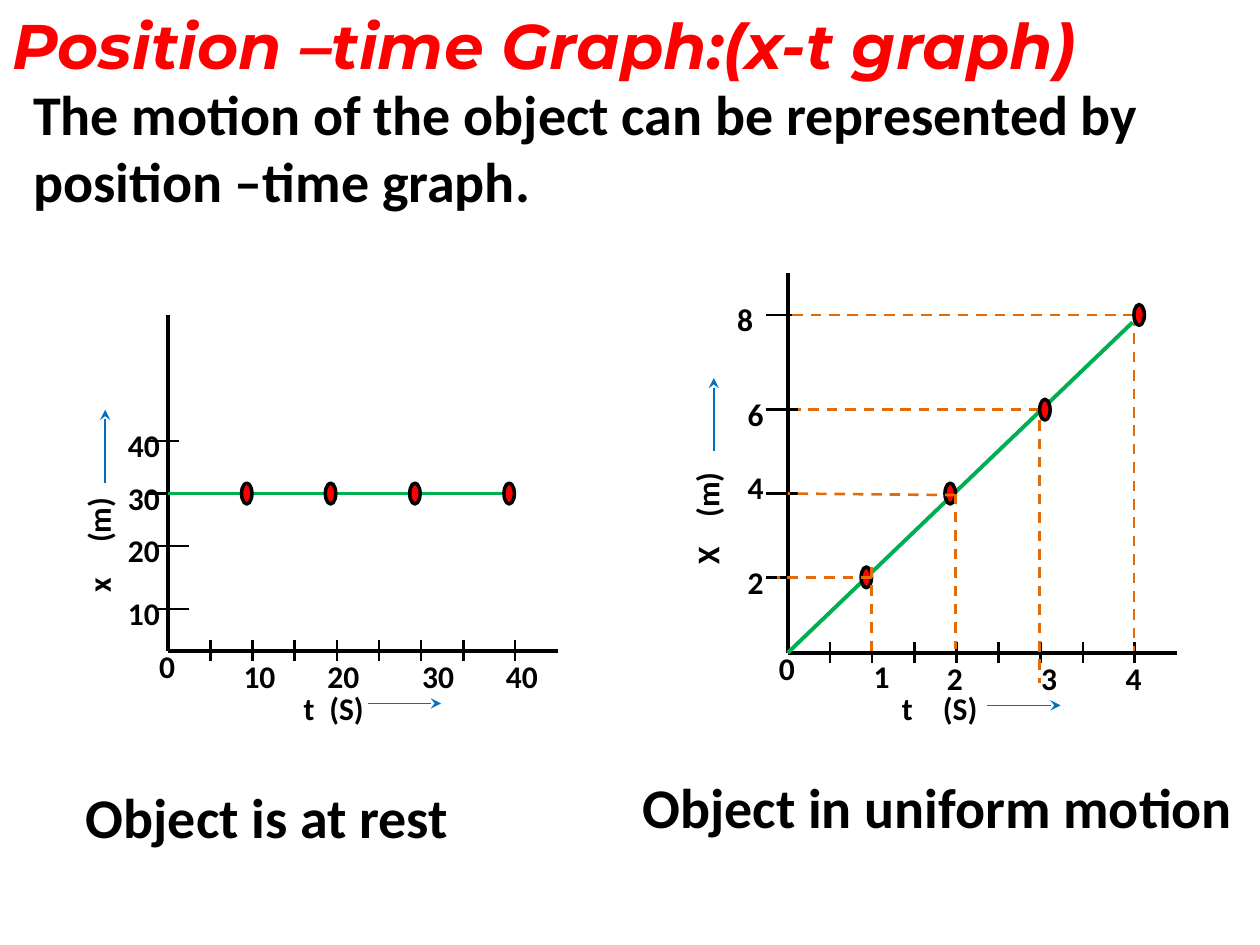
from pptx import Presentation
from pptx.dml.color import RGBColor
from pptx.enum.dml import MSO_LINE
from pptx.enum.shapes import MSO_CONNECTOR, MSO_SHAPE
from pptx.oxml.ns import qn
from pptx.util import Cm, Pt
from lxml.etree import SubElement

COLORS = {"ink": "000000", "red": "FF0000", "arrow": "0070C0",
          "motion": "00B050", "guide": "E36C09"}

# All positions are in centimetres; boxes are (left, top, width, height).
TITLE = ("Position –time Graph:(x-t graph)", (0, 0, 22.81, 1.8))
INTRO = ("The motion of the object can be represented by position –time graph.",
         (0.42, 1.48, 24.97, 3))

GRAPHS = [
    {
        "origin": (3.39, 13.12), "axis_top": 6.35,
        # label, left, top
        "x_labels": [("0", 2.96, 12.91), ("10", 4.66, 13.12), ("20", 6.35, 13.12),
                     ("30", 8.26, 13.12), ("40", 9.95, 13.12)],
        "y_labels": [("10", 2.33, 11.85), ("20", 2.33, 10.58),
                     ("30", 2.33, 9.53), ("40", 2.33, 8.47)],
        # tick left, tick height
        "y_ticks": [(3.18, 12.28), (3.18, 11.01), (2.96, 9.95), (2.96, 8.89)],
        # symbol, unit, box, indent, distance from symbol to unit, rotation
        "axis_titles": [("t", "(S)", (4.87, 13.76, 3.18, 1.03), 1, 0.52, 0),
                        ("x", "(m)", (0.15, 10.85, 3.68, 1.03), 1.02, 0.99, 270)],
        "arrows": [(7.41, 14.18, 8.89, 14.18), (2.12, 9.74, 2.12, 8.26)],
        "motion": (10.37, 9.95, 3.39, 9.95),
        "dots_below": [],
        "guides": [],
        "dots_above": [(4.87, 9.74), (6.56, 9.74), (8.26, 9.74), (10.16, 9.74)],
        "caption": ("Object is at rest", (1.48, 15.66, 8.89, 1.62)),
    },
    {
        "origin": (15.88, 13.16), "axis_top": 5.5,
        "x_labels": [("0", 15.45, 12.95), ("1", 17.36, 13.12), ("2", 18.84, 13.16),
                     ("3", 20.74, 13.16), ("4", 22.44, 13.16)],
        "y_labels": [("2", 14.82, 11.22), ("4", 14.82, 9.31),
                     ("6", 14.82, 7.83), ("8", 14.61, 5.93)],
        "y_ticks": [(15.45, 11.64), (15.45, 9.95), (15.45, 8.26), (15.45, 6.35)],
        "axis_titles": [("t", "(S)", (16.93, 13.76, 3.18, 1.03), 1, 0.83, 0),
                        ("X", "(m)", (12.42, 10.44, 3.68, 1.03), 1.16, 0.95, 270)],
        "arrows": [(19.9, 14.22, 21.38, 14.22), (14.39, 9.1, 14.39, 7.62)],
        "motion": (22.83, 6.5, 15.88, 13.16),
        "dots_below": [(17.36, 11.43), (19.05, 9.74)],
        "guides": [(17.57, 11.64, 15.66, 11.64), (19.26, 9.98, 15.88, 9.95),
                   (20.96, 8.26, 16.09, 8.26), (22.86, 6.35, 15.88, 6.35),
                   (17.57, 11.43, 17.57, 13.13), (19.26, 9.95, 19.26, 13.08),
                   (20.96, 8.47, 20.96, 13.77), (22.86, 6.35, 22.86, 13.13)],
        "dots_above": [(20.96, 8.05), (22.86, 6.14)],
        "caption": ("Object in uniform motion", (12.7, 15.45, 12.7, 1.62)),
    },
]
AXIS_LENGTH = 7.85
X_TICK_OFFSETS = [0.85 * step for step in range(1, 8)] + [6.99]
X_TICK_REACH = 0.21
Y_TICK_LENGTH = 0.64
DOT_SIZE = (0.21, 0.42)
LABEL_WIDTHS = {1: 0.85, 2: 1.16}
LABEL_HEIGHT = 1.03

prs = Presentation()
prs.slide_width, prs.slide_height = Cm(25.4), Cm(19.05)
slide = prs.slides.add_slide(prs.slide_layouts[6])
shapes = slide.shapes


def rgb(color):
    return RGBColor.from_string(COLORS[color])


def add_text(text, box, size=18, font="Calibri", color="ink", italic=False,
             indent=0, tab=None, rotation=0):
    holder = shapes.add_textbox(*map(Cm, box))
    holder.rotation = rotation
    frame = holder.text_frame
    frame.word_wrap = True
    frame.margin_left = Cm(0.25 + indent)
    paragraph = frame.paragraphs[0]
    run = paragraph.add_run()
    run.text = text
    run.font.name, run.font.size = font, Pt(size)
    run.font.bold, run.font.italic = True, italic
    run.font.color.rgb = rgb(color)
    if tab:
        stops = SubElement(paragraph._p.get_or_add_pPr(), qn("a:tabLst"))
        SubElement(stops, qn("a:tab"), pos=str(Cm(tab)), algn="l")


def add_line(ends, color="ink", width=1.5, dashed=False, arrow=False):
    line = shapes.add_connector(MSO_CONNECTOR.STRAIGHT, *map(Cm, ends))
    line.line.color.rgb = rgb(color)
    line.line.width = Pt(width)
    if dashed:
        line.line.dash_style = MSO_LINE.DASH
    if arrow:
        SubElement(line.line._get_or_add_ln(), qn("a:tailEnd"), type="stealth")
    SubElement(line._element.spPr, qn("a:effectLst"))


def add_dots(corners):
    for corner in corners:
        dot = shapes.add_shape(MSO_SHAPE.OVAL, *map(Cm, corner + DOT_SIZE))
        dot.shadow.inherit = False
        dot.fill.solid()
        dot.fill.fore_color.rgb = rgb("red")
        dot.line.color.rgb = rgb("ink")
        dot.line.width = Pt(2)


def draw_graph(graph):
    x0, y0 = graph["origin"]
    add_line((x0, graph["axis_top"], x0, y0), width=2.25)
    add_line((x0 + AXIS_LENGTH, y0, x0, y0), width=2.25)
    for offset in X_TICK_OFFSETS:
        add_line((x0 + offset, y0 - X_TICK_REACH, x0 + offset, y0 + X_TICK_REACH))
    for left, y in graph["y_ticks"]:
        add_line((left + Y_TICK_LENGTH, y, left, y))
    for label, left, top in graph["x_labels"] + graph["y_labels"]:
        add_text(label, (left, top, LABEL_WIDTHS[len(label)], LABEL_HEIGHT))
    for symbol, unit, box, indent, gap, rotation in graph["axis_titles"]:
        add_text(f"{symbol}\t{unit}", box, indent=indent, tab=gap, rotation=rotation)
    for ends in graph["arrows"]:
        add_line(ends, color="arrow", width=1, arrow=True)
    add_line(graph["motion"], color="motion", width=2.25)
    add_dots(graph["dots_below"])
    for ends in graph["guides"]:
        add_line(ends, color="guide", dashed=True)
    add_dots(graph["dots_above"])
    add_text(*graph["caption"], size=32)


add_text(*INTRO, size=32)
add_text(*TITLE, size=36, font="Montserrat", color="red", italic=True)
for graph in GRAPHS:
    draw_graph(graph)
prs.save("out.pptx")
